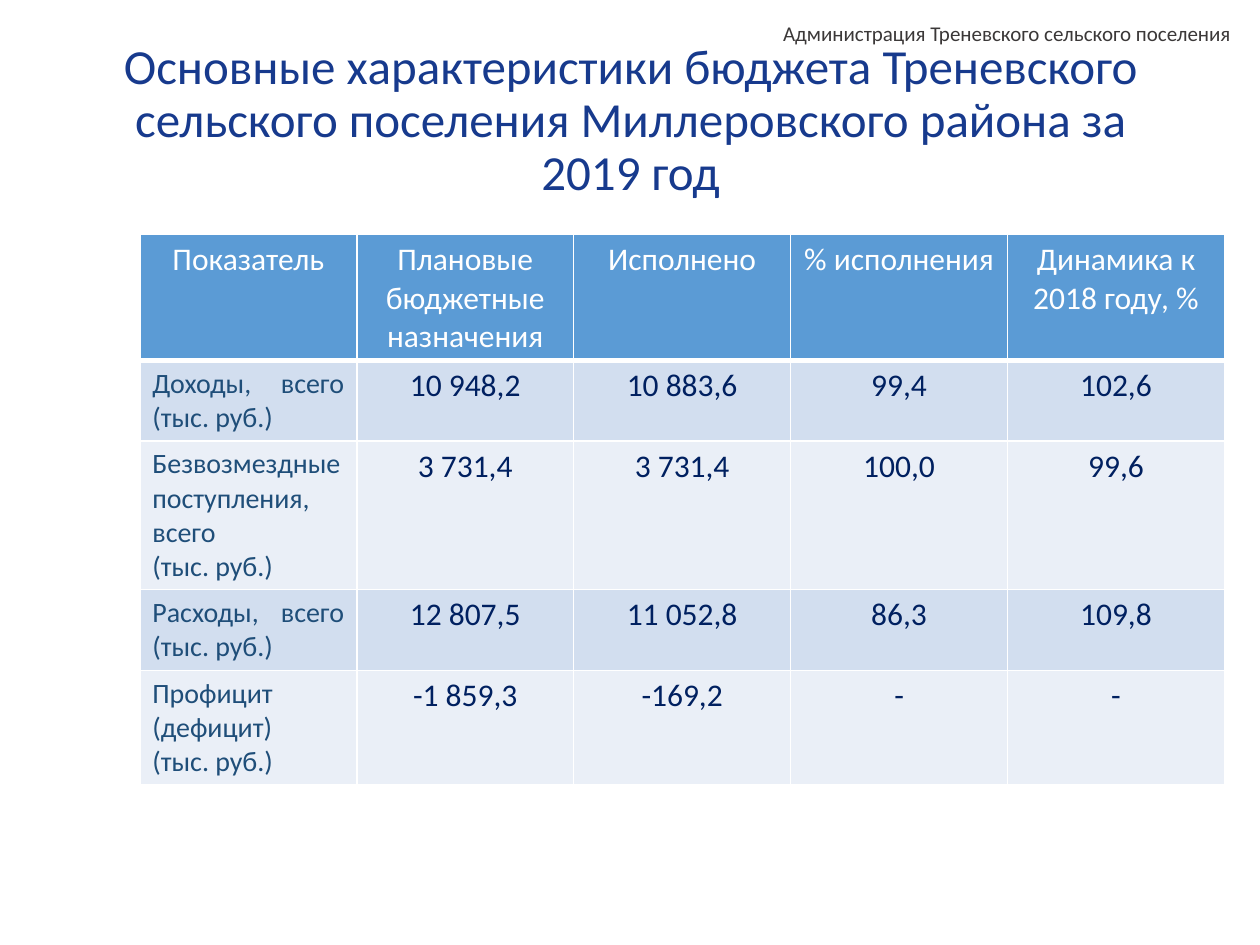
from lxml.etree import SubElement
from pptx import Presentation
from pptx.dml.color import RGBColor
from pptx.enum.text import MSO_ANCHOR as Anchor, PP_ALIGN as Align
from pptx.oxml.ns import qn
from pptx.util import Inches, Pt

TITLE = ("Основные характеристики бюджета Треневского сельского поселения "
         "Миллеровского района за 2019 год")
OWNER = "Администрация Треневского сельского поселения"
HEADER = ["Показатель", "Плановые бюджетные назначения", "Исполнено",
          "% исполнения", "Динамика к 2018 году, %"]
ROWS = [
    ["Доходы, всего (тыс. руб.)", "10 948,2", "10 883,6", "99,4", "102,6"],
    ["Безвозмездные поступления, всего\n(тыс. руб.)", "3 731,4", "3 731,4", "100,0", "99,6"],
    ["Расходы, всего (тыс. руб.)", "12 807,5", "11 052,8", "86,3", "109,8"],
    ["Профицит (дефицит)\n(тыс. руб.)", "-1 859,3", "-169,2", "-", "-"],
]
ROW_HEIGHTS = [1, 0.64, 1.18, 0.64, 0.91]
LEFT, TOP, WIDTH = 1.11, 1.86, 8.61
HEADER_FILL, BANDS = "5B9BD5", ["D2DEEF", "EAEFF7"]
WHITE = "FFFFFF"


def color(value):
    return RGBColor.from_string(value)


def write(tf, text, size, fill, align=Align.CENTER, spacing=None):
    for i, line in enumerate(text.split("\n")):
        p = tf.add_paragraph() if i else tf.paragraphs[0]
        p.alignment = align
        if spacing:
            p.line_spacing = spacing
        r = p.add_run()
        r.text = line
        r.font.name, r.font.size = "Calibri", Pt(size)
        r.font.bold = False
        r.font.color.rgb = color(fill)


def add_text(s, box, text, **style):
    tf = s.shapes.add_textbox(*map(Inches, box)).text_frame
    tf.word_wrap = True
    tf.vertical_anchor = Anchor.MIDDLE
    write(tf, text, **style)


def style_cell(cell, fill, top=1, bottom=1):
    """Give the cell white borders (widths in points) and a solid fill."""
    tc_pr = cell._tc.get_or_add_tcPr()
    for side, width in (("L", 1), ("R", 1), ("T", top), ("B", bottom)):
        ln = SubElement(tc_pr, qn(f"a:ln{side}"), w=str(Pt(width)))
        SubElement(SubElement(ln, qn("a:solidFill")), qn("a:srgbClr"), val=WHITE)
    cell.fill.solid()
    cell.fill.fore_color.rgb = color(fill)


def add_budget_table(s):
    data = [HEADER] + ROWS
    frame = s.shapes.add_table(len(data), len(HEADER), Inches(LEFT), Inches(TOP),
                               Inches(WIDTH), Inches(sum(ROW_HEIGHTS)))
    table = frame.table
    for column in table.columns:
        column.width = Inches(WIDTH / len(HEADER))
    for i, (values, height) in enumerate(zip(data, ROW_HEIGHTS)):
        table.rows[i].height = Inches(height)
        for j, text in enumerate(values):
            cell = table.cell(i, j)
            if i == 0:
                style_cell(cell, HEADER_FILL, bottom=3)
                write(cell.text_frame, text, 18, WHITE)
                continue
            style_cell(cell, BANDS[(i - 1) % 2], top=3 if i == 1 else 1)
            if j == 0:
                write(cell.text_frame, text, 16, "1F4E79", Align.JUSTIFY)
            else:
                write(cell.text_frame, text, 18, "002060")


def main():
    prs = Presentation()
    prs.slide_width, prs.slide_height = Inches(10), Inches(7.5)
    s = prs.slides.add_slide(prs.slide_layouts[6])
    add_text(s, (0.72, 0.43, 8.57, 1.07), TITLE, size=28, fill="173A8D", spacing=0.9)
    add_budget_table(s)
    add_text(s, (3.54, 0.14, 6.33, 0.24), OWNER, size=12, fill="3B3838", align=Align.RIGHT)
    prs.save("out.pptx")


if __name__ == "__main__":
    main()
